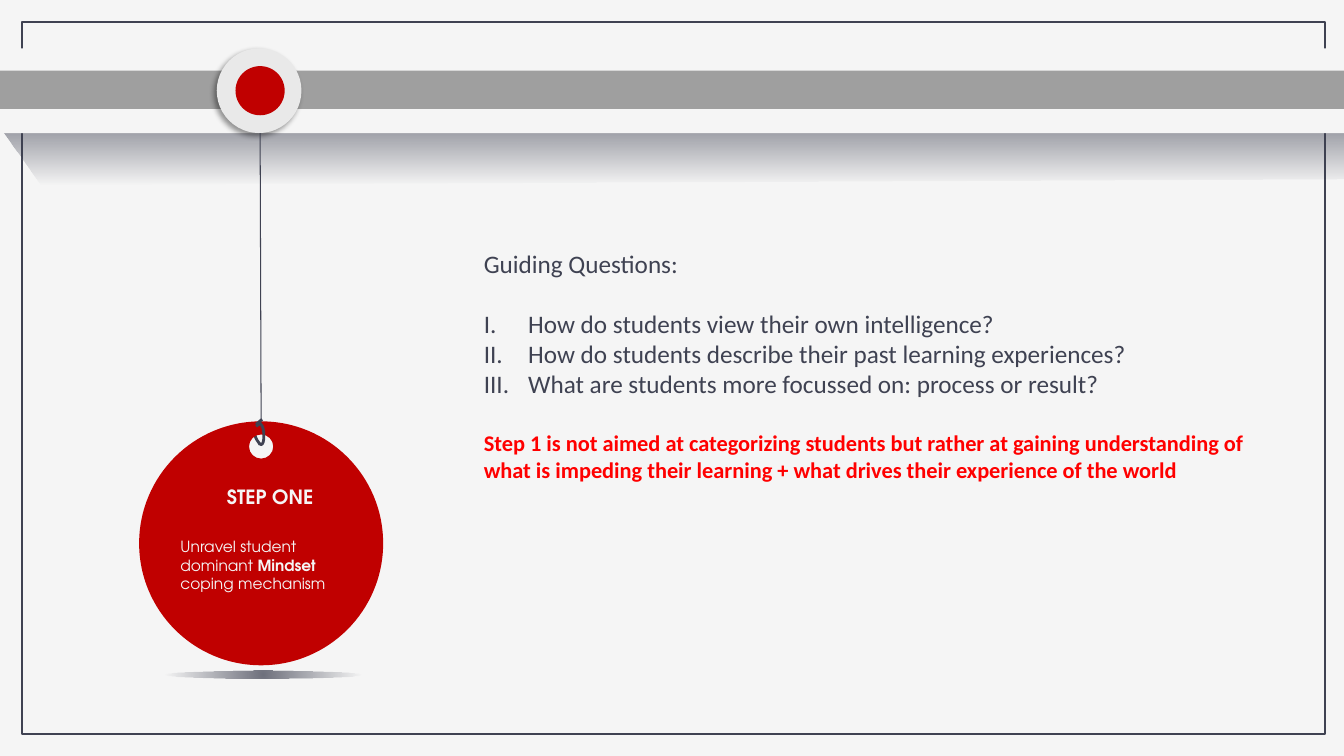
import math
from dataclasses import dataclass
from typing import Optional

import pptx
import pptx.dml.color
import pptx.enum.shapes
import pptx.enum.text
import pptx.oxml
import pptx.oxml.ns
import pptx.util
from pptx.util import Inches, Pt

RGBColor = pptx.dml.color.RGBColor
Shape = pptx.enum.shapes.MSO_SHAPE
Point = tuple[float, float]

PAPER = RGBColor(0xF5, 0xF5, 0xF5)
INK = RGBColor(0x3F, 0x42, 0x52)
GREY = RGBColor(0x9F, 0x9F, 0x9F)
KNOB = RGBColor(0xE9, 0xE9, 0xE9)
CRIMSON = RGBColor(0xC0, 0x00, 0x00)
RED = RGBColor(0xFF, 0x00, 0x00)
TAG_FONT = "TeX Gyre Adventor"
BODY_FONT = "Calibri"
NAMESPACE = 'xmlns:a="http://schemas.openxmlformats.org/drawingml/2006/main"'
DOWNWARD = '<a:lin ang="5400000" scaled="0"/>'
RADIAL = '<a:path path="circle"><a:fillToRect l="50000" t="50000" r="50000" b="50000"/></a:path>'


@dataclass
class Preset:
    kind: Shape
    left: float
    top: float
    width: float
    height: float
    fill: Optional[RGBColor] = None
    line: Optional[RGBColor] = None
    line_width: float = 0


@dataclass
class TextLine:
    runs: list[tuple[str, bool]]
    size: float
    color: RGBColor
    font: str
    space_before: float = 0
    numbered: bool = False


FRAME = Preset(Shape.RECTANGLE, 0.22, 0.22, 12.92, 7.06, line=INK, line_width=1.5)
BARS = [
    Preset(Shape.ROUNDED_RECTANGLE, -0.66, 0.48, 14.92, 0.84, PAPER),
    Preset(Shape.ROUNDED_RECTANGLE, -0.32, 0.7, 14.11, 0.38, GREY),
]
TAG_SHADOW = Preset(Shape.OVAL, 1.63, 6.65, 1.96, 0.08)
KNOB_RIM = Preset(Shape.OVAL, 2.15, 0.48, 0.84, 0.84, KNOB)
KNOB_CENTRE = Preset(Shape.OVAL, 2.35, 0.67, 0.46, 0.46, CRIMSON, CRIMSON, 2)

BAR_SHADOW = [(0.41, 1.83), (-0.17, 1.02), (13.22, 1.17), (13.62, 1.77)]
HOOK_BACK = [(2.58, 4.41), (2.56, 4.38), (2.53, 4.35), (2.53, 4.31), (2.53, 4.28), (2.55, 4.24), (2.57, 4.2)]
HOOK_FRONT = [
    (2.56, 4.21), (2.59, 4.2), (2.6, 4.22), (2.61, 4.25), (2.62, 4.28),
    (2.62, 4.37), (2.61, 4.39), (2.6, 4.42), (2.58, 4.41), (2.57, 4.4),
]
KNOT = [[(2.54, 4.23), (2.59, 4.19)], [(2.54, 4.21), (2.6, 4.16)]]

TAG_TEXT = [
    TextLine([("Unravel student", False)], 11, PAPER, TAG_FONT),
    TextLine([("dominant ", False), ("Mindset", True)], 11, PAPER, TAG_FONT),
    TextLine([("coping mechanism", False)], 11, PAPER, TAG_FONT),
]
QUESTIONS = [
    "How do students view their own intelligence?",
    "How do students describe their past learning experiences?",
    "What are students more focussed on: process or result?",
]
NOTE = (
    "Step 1 is not aimed at categorizing students but rather at gaining understanding of "
    "what is impeding their learning + what drives their experience of the world"
)
BODY_TEXT = [
    TextLine([("Guiding Questions:", False)], 18, INK, BODY_FONT),
    *(
        TextLine([(question, False)], 18, INK, BODY_FONT, 0 if index else 21.5, numbered=True)
        for index, question in enumerate(QUESTIONS)
    ),
    TextLine([(NOTE, True)], 16, RED, BODY_FONT, 21.5),
]


def style(shape, fill: Optional[RGBColor], line: Optional[RGBColor], line_width: float) -> None:
    shape.shadow.inherit = False
    if fill is None:
        shape.fill.background()
    else:
        shape.fill.solid()
        shape.fill.fore_color.rgb = fill
    if line is None:
        shape.line.fill.background()
    else:
        shape.line.color.rgb = line
        shape.line.width = Pt(line_width)


def add_preset(slide, preset: Preset):
    box = map(Inches, (preset.left, preset.top, preset.width, preset.height))
    shape = slide.shapes.add_shape(preset.kind, *box)
    if preset.kind == Shape.ROUNDED_RECTANGLE:
        shape.adjustments[0] = 0.5
    style(shape, preset.fill, preset.line, preset.line_width)
    return shape


def add_outline(slide, contours: list[list[Point]], closed: bool = False, curved: bool = False,
                fill: Optional[RGBColor] = None, line: Optional[RGBColor] = None):
    """Draw one freeform; in a curved one each three points make a cubic segment."""
    contours = [[(Inches(x), Inches(y)) for x, y in contour] for contour in contours]
    builder = slide.shapes.build_freeform(*contours[0][0])
    for index, contour in enumerate(contours):
        if index:
            builder.move_to(*contour[0])
        builder.add_line_segments(contour[1:], close=closed)
    shape = builder.convert_to_shape()
    if curved:
        bend(shape)
    style(shape, fill, line, 2)
    return shape


def bend(shape) -> None:
    """Join each three straight segments into one cubic curve."""
    segments = list(shape.element.spPr.iter(pptx.oxml.ns.qn("a:lnTo")))
    for first in range(0, len(segments), 3):
        curve = pptx.oxml.parse_xml(f"<a:cubicBezTo {NAMESPACE}/>")
        segments[first].addprevious(curve)
        for segment in segments[first:first + 3]:
            curve.append(segment[0])
            segment.getparent().remove(segment)


def circle(x: float, y: float, radius: float) -> list[Point]:
    """Give the start and the control points of four quarter arcs."""
    handle = 0.5523
    points = [(x, y - radius)]
    for quarter in range(4):
        sine, cosine = math.sin(quarter * math.pi / 2), math.cos(quarter * math.pi / 2)
        for across, up in ((handle, 1), (1, handle), (1, 0)):
            points.append((x + radius * (across * cosine + up * sine),
                           y + radius * (across * sine - up * cosine)))
    return points


def fade(shape, direction: str) -> None:
    """Replace an empty fill with ink that fades to nothing."""
    stops = "".join(
        f'<a:gs pos="{position}"><a:srgbClr val="{INK}"><a:alpha val="{alpha}"/></a:srgbClr></a:gs>'
        for position, alpha in ((0, 74000), (100000, 0))
    )
    properties = shape.element.spPr
    gradient = pptx.oxml.parse_xml(
        f'<a:gradFill {NAMESPACE} rotWithShape="1"><a:gsLst>{stops}</a:gsLst>{direction}</a:gradFill>'
    )
    properties.replace(properties.find(pptx.oxml.ns.qn("a:noFill")), gradient)


def cast_shadow(shape) -> None:
    effects = shape.element.spPr.find(pptx.oxml.ns.qn("a:effectLst"))
    effects.append(pptx.oxml.parse_xml(
        f'<a:outerShdw {NAMESPACE} blurRad="{Pt(4)}" dist="{Pt(3)}" dir="{135 * 60000}" rotWithShape="0">'
        '<a:srgbClr val="000000"><a:alpha val="40000"/></a:srgbClr></a:outerShdw>'
    ))


def add_string(slide, start: Point, end: Point) -> None:
    string = slide.shapes.add_connector(
        pptx.enum.shapes.MSO_CONNECTOR.STRAIGHT, *map(Inches, start + end)
    )
    string.line.color.rgb = INK
    string.line.width = Pt(0.75)
    string.element.spPr.append(pptx.oxml.parse_xml(f"<a:effectLst {NAMESPACE}/>"))


def fill_text(text_frame, lines: list[TextLine]) -> None:
    text_frame.text = "\n".join("".join(text for text, _ in line.runs) for line in lines)
    for paragraph, line in zip(text_frame.paragraphs, lines):
        paragraph.space_before = Pt(line.space_before)
        paragraph.text = line.runs[0][0]
        for text, _ in line.runs[1:]:
            paragraph.add_run().text = text
        for run, (_, bold) in zip(paragraph.runs, line.runs):
            run.font.name = line.font
            run.font.size = Pt(line.size)
            run.font.bold = bold
            run.font.color.rgb = line.color
        if line.numbered:
            properties = paragraph._p.get_or_add_pPr()
            properties.set("marL", str(Inches(0.44)))
            properties.set("indent", str(-Inches(0.44)))
            properties.append(pptx.oxml.parse_xml(f'<a:buAutoNum {NAMESPACE} type="romanUcPeriod"/>'))


def add_text(slide, left: float, top: float, width: float, height: float, lines: list[TextLine]) -> None:
    text_frame = slide.shapes.add_textbox(*map(Inches, (left, top, width, height))).text_frame
    text_frame.word_wrap = True
    fill_text(text_frame, lines)


def place_title(slide) -> None:
    title = slide.shapes.title
    title.left, title.top, title.width, title.height = map(Inches, (2.14, 4.76, 1.08, 0.34))
    title.line.color.rgb = CRIMSON
    title.line.width = Pt(0.75)
    fill_text(title.text_frame, [TextLine([("STEP ONE", True)], 14, PAPER, TAG_FONT)])
    title.text_frame.word_wrap = False
    title.text_frame.auto_size = pptx.enum.text.MSO_AUTO_SIZE.NONE
    title.text_frame.vertical_anchor = pptx.enum.text.MSO_ANCHOR.MIDDLE
    title.text_frame.paragraphs[0].alignment = pptx.enum.text.PP_ALIGN.CENTER
    title.element.getparent().append(title.element)  # bring in front of the tag


def main() -> None:
    presentation = pptx.Presentation()
    presentation.slide_width, presentation.slide_height = Inches(13.33), Inches(7.5)
    slide = presentation.slides.add_slide(presentation.slide_layouts.get_by_name("Title Only"))
    slide.background.fill.solid()
    slide.background.fill.fore_color.rgb = PAPER

    add_preset(slide, FRAME)
    fade(add_outline(slide, [BAR_SHADOW], closed=True), DOWNWARD)
    for bar in BARS:
        add_preset(slide, bar)

    fade(add_preset(slide, TAG_SHADOW), RADIAL)
    add_outline(slide, [HOOK_BACK], curved=True, line=INK)
    tag = [circle(2.59, 4.43, 0.12), circle(2.59, 5.39, 1.21)]
    add_outline(slide, tag, closed=True, curved=True, fill=CRIMSON)
    add_text(slide, 1.69, 5.28, 1.9, 0.66, TAG_TEXT)

    cast_shadow(add_preset(slide, KNOB_RIM))
    add_preset(slide, KNOB_CENTRE)
    add_string(slide, (2.58, 1.32), (2.59, 4.18))
    add_outline(slide, [HOOK_FRONT], curved=True, line=INK)
    for strand in KNOT:
        add_outline(slide, [strand], line=INK)

    place_title(slide)
    add_text(slide, 4.7, 2.41, 7.99, 2.83, BODY_TEXT)
    presentation.save("out.pptx")


if __name__ == "__main__":
    main()
